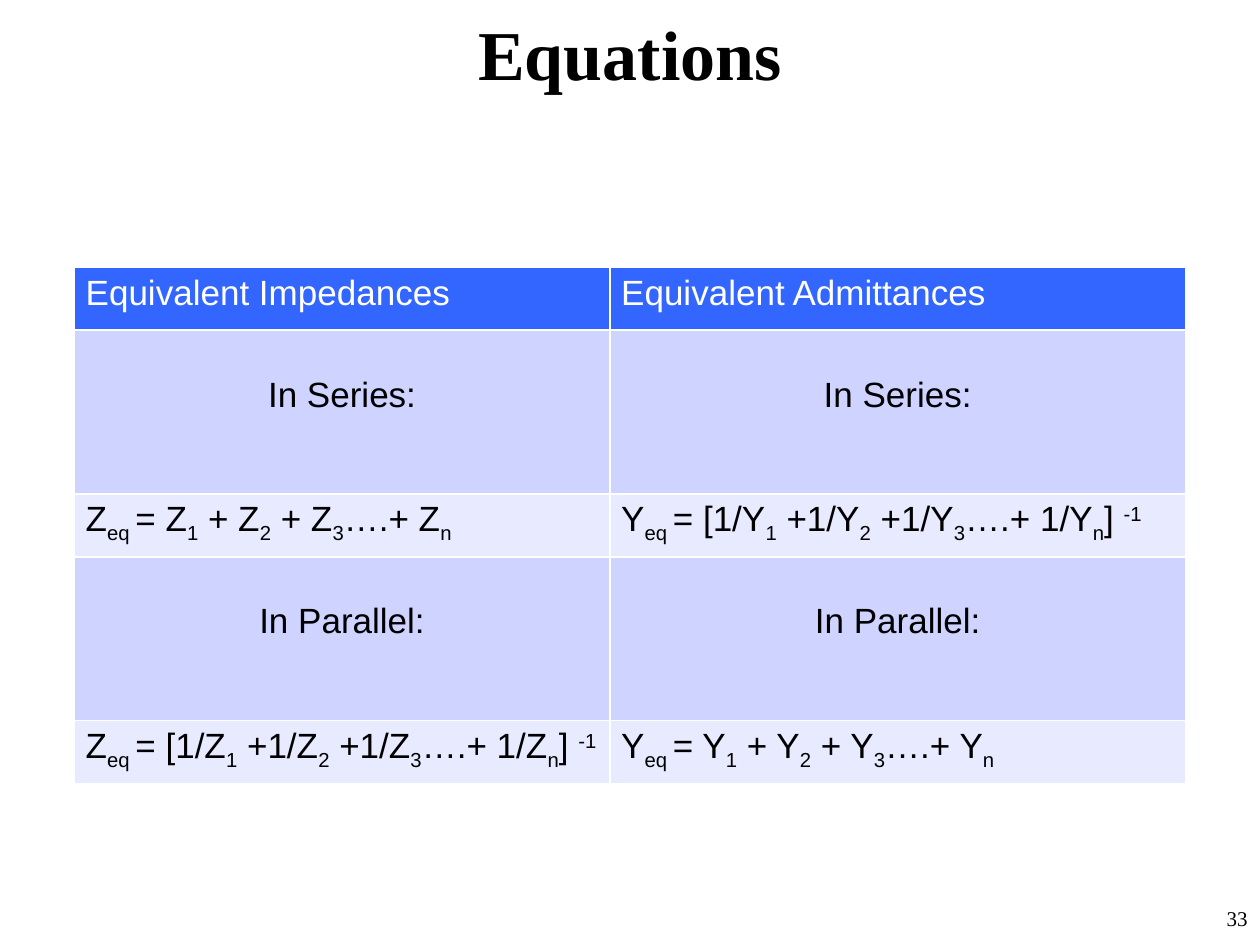
from lxml import etree
from pptx import Presentation
from pptx.dml.color import RGBColor
from pptx.enum import text
from pptx.oxml.ns import qn
from pptx.util import Inches, Pt

BLACK = RGBColor(0, 0, 0)
WHITE = RGBColor(0xFF, 0xFF, 0xFF)
HEADER = RGBColor(0x33, 0x66, 0xFF)
BAND_DARK = RGBColor(0xCE, 0xD3, 0xFF)
BAND_LIGHT = RGBColor(0xE8, 0xEA, 0xFF)
SERIF, SANS = "Times New Roman", "Arial"
LEFT, CENTER, RIGHT = (text.PP_ALIGN.LEFT, text.PP_ALIGN.CENTER,
                       text.PP_ALIGN.RIGHT)


def style_run(r, font, size, color, bold=False):
    r.font.name, r.font.size, r.font.bold = font, Pt(size), bold
    r.font.color.rgb = color


def add_label(s, box, label, size, align, bold=False,
              anchor=text.MSO_ANCHOR.TOP):
    tf = s.shapes.add_textbox(*map(Inches, box)).text_frame
    tf.word_wrap = True
    tf.vertical_anchor = anchor
    tf.text = label
    p = tf.paragraphs[0]
    p.alignment = align
    style_run(p.runs[0], SERIF, size, BLACK, bold)


def sum_formula(sym):
    """Plain and shifted pieces alternate, separated by bars."""
    return f"{sym}|eq |= {sym}|1| + {sym}|2| + {sym}|3|….+ {sym}|n"


def reciprocal_formula(sym):
    """Plain and shifted pieces alternate, separated by bars."""
    return (f"{sym}|eq |= [1/{sym}|1| +1/{sym}|2| +1/{sym}|3"
            f"|….+ 1/{sym}|n|] |-1")


def border_cell(cell):
    tcPr = cell._tc.get_or_add_tcPr()
    for i, side in enumerate(("a:lnL", "a:lnR", "a:lnT", "a:lnB")):
        ln = etree.Element(qn(side), w=str(Pt(1)))
        fill = etree.SubElement(ln, qn("a:solidFill"))
        etree.SubElement(fill, qn("a:srgbClr"), val=str(WHITE))
        tcPr.insert(i, ln)


def fill_cell(cell, content, fill, color, align, top):
    cell.fill.solid()
    cell.fill.fore_color.rgb = fill
    cell.margin_left = cell.margin_right = Inches(0.09)
    cell.margin_top, cell.margin_bottom = Inches(top), Inches(0.05)
    p = cell.text_frame.paragraphs[0]
    p.alignment = align
    for i, piece in enumerate(content.split("|")):
        r = p.add_run()
        r.text = piece
        style_run(r, SANS, 20, color)
        if i % 2:
            r.font._element.set("baseline",
                                "30000" if piece == "-1" else "-25000")
    border_cell(cell)


def add_equation_table(s, box):
    header = (0.5, HEADER, WHITE, LEFT, 0.05)
    caption = (1.3, BAND_DARK, BLACK, CENTER, 0.36)
    formula = (0.5, BAND_LIGHT, BLACK, LEFT, 0.05)
    rows = [
        (header, "Equivalent Impedances", "Equivalent Admittances"),
        (caption, "In Series:", "In Series:"),
        (formula, sum_formula("Z"), reciprocal_formula("Y")),
        (caption, "In Parallel:", "In Parallel:"),
        (formula, reciprocal_formula("Z"), sum_formula("Y")),
    ]
    table = s.shapes.add_table(len(rows), 2, *map(Inches, box)).table
    first = 4.25
    table.columns[0].width = Inches(first)
    table.columns[1].width = Inches(box[2] - first)
    for i, ((height, *look), *contents) in enumerate(rows):
        table.rows[i].height = Inches(height)
        for j, content in enumerate(contents):
            fill_cell(table.cell(i, j), content, *look)


def main():
    prs = Presentation()
    prs.slide_width, prs.slide_height = Inches(10), Inches(7.5)
    s = prs.slides.add_slide(prs.slide_layouts[6])
    add_label(s, (0, 0, 10, 0.84), "Equations", 40, CENTER, bold=True,
              anchor=text.MSO_ANCHOR.MIDDLE)
    add_equation_table(s, (0.59, 2.12, 8.82, 4.1))
    add_label(s, (7.92, 7.14, 2.08, 0.36), "33", 12, RIGHT)
    prs.save("out.pptx")


if __name__ == "__main__":
    main()
